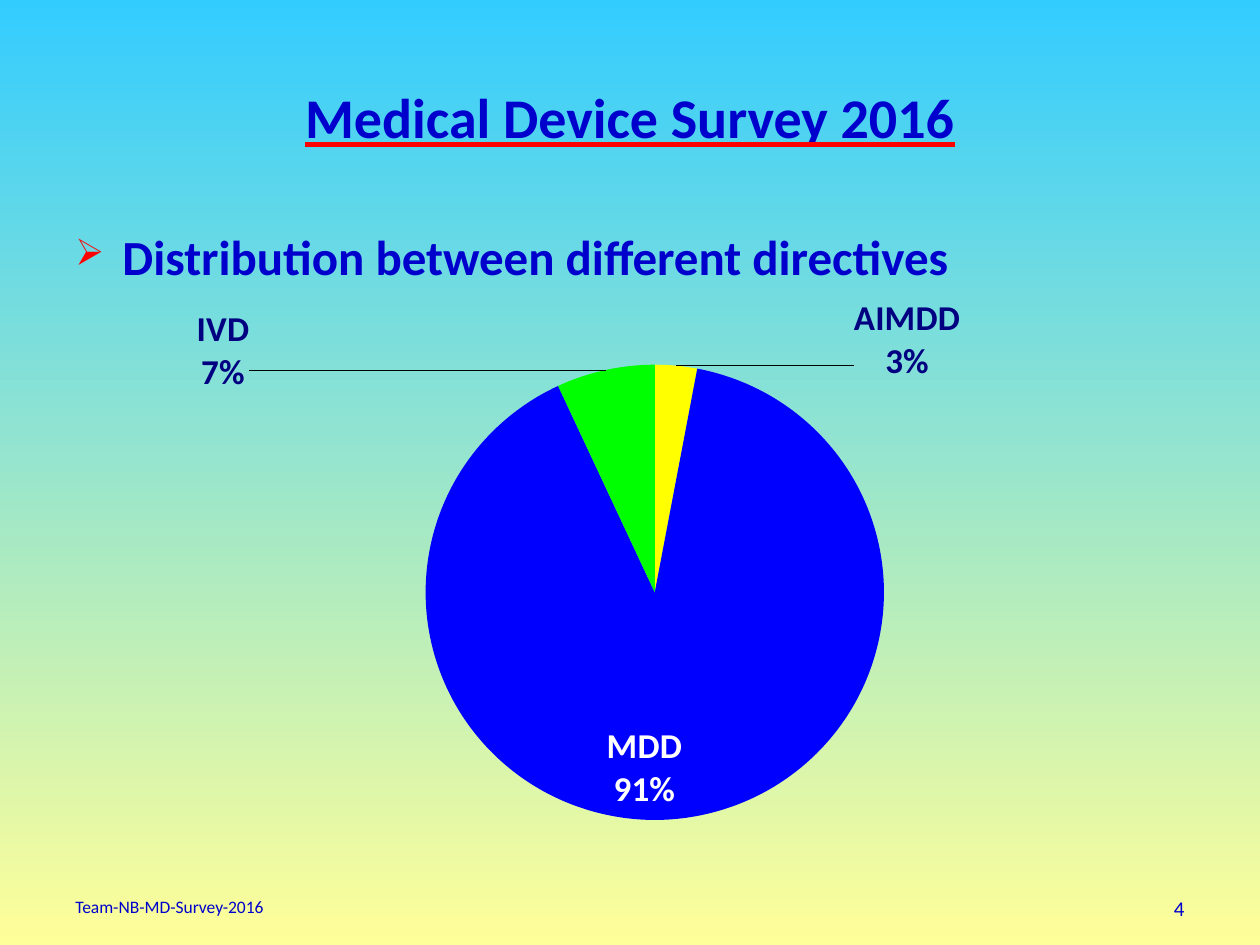
from lxml import etree
from pptx import Presentation
from pptx.chart.data import CategoryChartData
from pptx.dml.color import RGBColor
from pptx.enum.chart import XL_CHART_TYPE as ChartType, XL_LABEL_POSITION as LabelPos
from pptx.enum.text import MSO_ANCHOR as Anchor, PP_ALIGN as Align
from pptx.oxml import parse_xml
from pptx.oxml.ns import nsdecls, qn
from pptx.util import Cm, Pt

NAVY = "0000CC"
RED = "FF0000"


def rgb(value):
    return RGBColor.from_string(value)


def style(font, color, **formats):
    font.color.rgb = rgb(color)
    for key, value in ({"name": "Calibri"} | formats).items():
        setattr(font, key, value)


prs = Presentation()
prs.slide_width, prs.slide_height = Cm(25.4), Cm(19.05)
slide = prs.slides.add_slide(prs.slide_layouts[5])

background = slide.background.fill
background.gradient()
background.gradient_angle = 270
for stop, color in zip(background.gradient_stops, ("33CCFF", "FFFF99")):
    stop.color.rgb = rgb(color)

# Title with a red underline
title = slide.shapes.title
title.left, title.top, title.width, title.height = Cm(1.27), Cm(0.76), Cm(22.86), Cm(3.18)
title.text_frame.text = "Medical Device Survey 2016"
title.text_frame.vertical_anchor = Anchor.MIDDLE
heading = title.text_frame.paragraphs[0]
heading.alignment = Align.CENTER
heading_run = heading.runs[0]
style(heading_run.font, NAVY, size=Pt(32), bold=True, underline=True)
heading_run.font._element.find(qn("a:latin")).addprevious(parse_xml(
    f'<a:uFill {nsdecls("a")}><a:solidFill><a:srgbClr val="{RED}"/></a:solidFill></a:uFill>'))

# Pie of the directives
shares = CategoryChartData()
shares.categories = ["AIMDD", "MDD", "IVD"]
shares.add_series("Series 1", (3, 91, 7))
pie = slide.shapes.add_chart(
    ChartType.PIE, Cm(2.49), Cm(5.49), Cm(21), Cm(12.45), shares).chart
pie.has_legend = False
pie.has_title = False
style(pie.font, "000000", name="Arial", size=Pt(10))


def manual_layout(x, y, w=None, h=None):
    """Build a chart layout; without a size, x and y are offsets."""
    values = {"x": x, "y": y}
    layout = etree.Element(qn("c:layout"))
    manual = etree.SubElement(layout, qn("c:manualLayout"))
    if w:
        values |= {"w": w, "h": h}
        etree.SubElement(manual, qn("c:layoutTarget"), val="inner")
        for axis in "xy":
            etree.SubElement(manual, qn(f"c:{axis}Mode"), val="edge")
    for key, value in values.items():
        etree.SubElement(manual, qn(f"c:{key}"), val=str(value))
    return layout


plot_area = pie._chartSpace.chart.plotArea
for old_layout in plot_area.findall(qn("c:layout")):
    plot_area.remove(old_layout)
plot_area.insert(0, manual_layout(0.29, 0.14, 0.44, 0.75))

directives = pie.plots[0].series[0]
labels = directives.data_labels
labels.show_category_name = True
labels.show_value = True
labels.number_format = '0"%"'
labels.number_format_is_linked = False
style(labels.font, "000080", size=Pt(20), bold=True)

slices = [  # fill, label colour, label position, label offset
    ("FFFF00", "000080", LabelPos.OUTSIDE_END, (0.17, 0.04)),
    ("0000FF", "FFFFFF", LabelPos.INSIDE_END, (0, 0)),
    ("00FF00", "000080", LabelPos.OUTSIDE_END, (-0.34, 0.05)),
]
for index, (fill, color, position, offset) in enumerate(slices):
    point = directives.points[index]
    point.format.fill.solid()
    point.format.fill.fore_color.rgb = rgb(fill)
    label = point.data_label
    style(label.font, color, size=Pt(20), bold=True)
    label.position = position
    entry = labels._element.findall(qn("c:dLbl"))[index]
    entry.find(qn("c:showCatName")).set("val", "1")
    entry.find(qn("c:showPercent")).set("val", "0")
    number_format = etree.Element(qn("c:numFmt"), formatCode='0"%"', sourceLinked="0")
    entry.find(qn("c:idx")).addnext(number_format)
    if any(offset):
        number_format.addprevious(manual_layout(*offset))
    etree.SubElement(entry, qn("c:separator")).text = "\n"

# Bullet line, footer and page number
lines = [  # text, left, top, width, height, size, bold, alignment
    ("Distribution between\u00a0different directives".replace("\u00a0", " "),
     1.27, 4.45, 22.86, 2.08, 28, True, Align.LEFT),
    ("Team-NB-MD-Survey-2016", 1.27, 17.93, 8.05, 0.74, 10, False, Align.LEFT),
    ("4", 18.21, 17.93, 5.92, 0.74, 12, False, Align.RIGHT),
]
for text, left, top, width, height, size, bold, alignment in lines:
    frame = slide.shapes.add_textbox(Cm(left), Cm(top), Cm(width), Cm(height)).text_frame
    frame.word_wrap = True
    paragraph = frame.paragraphs[0]
    paragraph.alignment = alignment
    if bold:
        properties = paragraph._p.get_or_add_pPr()
        properties.set("marL", str(Cm(0.95)))
        properties.set("indent", str(-Cm(0.95)))
        bullet_color = etree.SubElement(properties, qn("a:buClr"))
        etree.SubElement(bullet_color, qn("a:srgbClr"), val=RED)
        etree.SubElement(properties, qn("a:buSzPct"), val="75000")
        etree.SubElement(properties, qn("a:buChar"), char="➢")
    run = paragraph.add_run()
    run.text = text
    style(run.font, NAVY, size=Pt(size), bold=bold)

prs.save("out.pptx")
